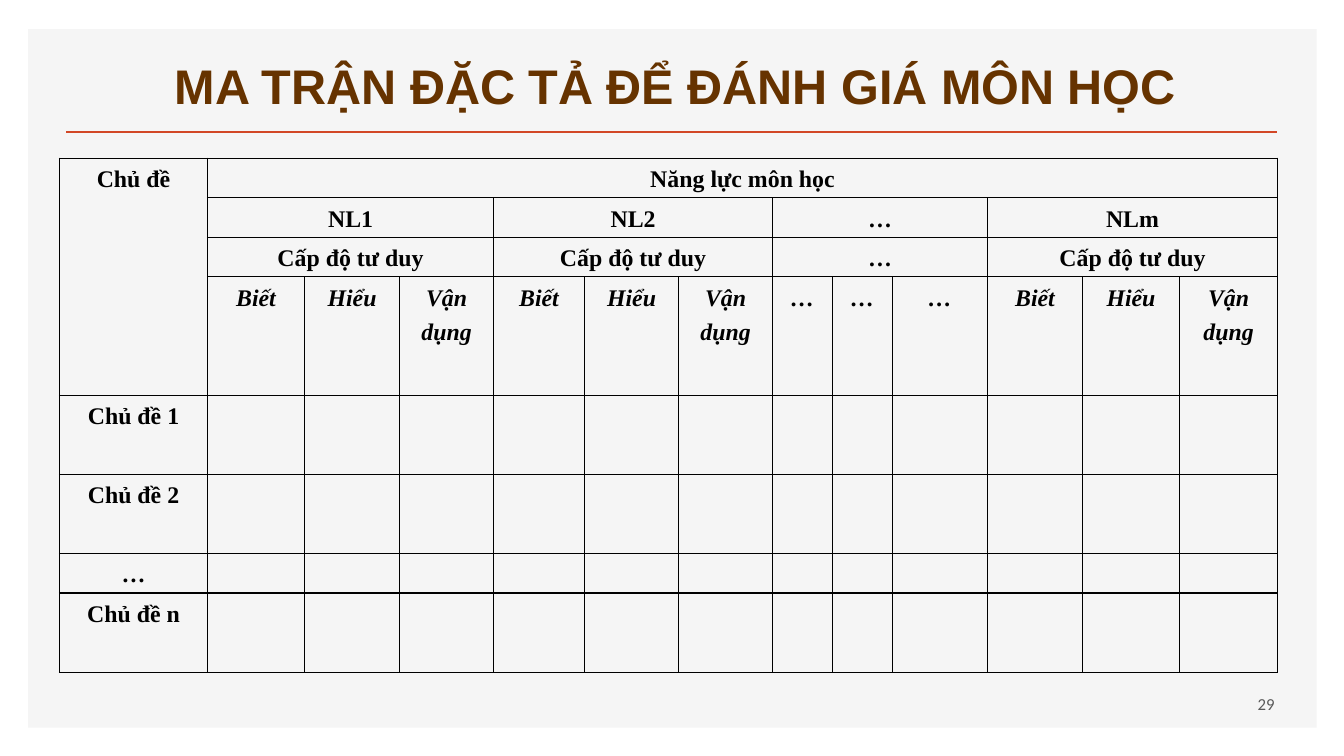
import typing

import lxml.etree
import pptx
import pptx.dml.color
import pptx.enum.shapes
import pptx.enum.text
import pptx.oxml
import pptx.oxml.ns
import pptx.util

ALIGN = pptx.enum.text.PP_ALIGN
ANCHOR = pptx.enum.text.MSO_ANCHOR
INCH = pptx.util.Inches
PT = pptx.util.Pt
QN = pptx.oxml.ns.qn

WIDE, HIGH = INCH(13.33), INCH(7.5)
HUES = {"panel": "F5F5F5", "rule": "D24726", "title": "663300",
        "page": "595959", "ink": "000000"}


class Box(typing.NamedTuple):
    """Place and size in percent of the slide's width and height."""
    left: float
    top: float
    wide: float
    high: float

    def emu(self) -> list[int]:
        sides = (WIDE, HIGH, WIDE, HIGH)
        return [round(side * part / 100) for side, part in zip(sides, self)]


class Style(typing.NamedTuple):
    hue: str
    font: dict
    para: dict
    frame: dict


class Label(typing.NamedTuple):
    text: str
    box: Box
    style: Style


class Head(typing.NamedTuple):
    """A table label with its cell and the rows and columns it covers."""
    text: str
    row: int
    col: int
    rows: int = 1
    cols: int = 1
    slant: bool = False


TITLE = Style("title", {"name": "Arial", "size": PT(34.7), "bold": True},
              {"alignment": ALIGN.CENTER, "line_spacing": 0.9},
              {"word_wrap": True, "vertical_anchor": ANCHOR.BOTTOM})
PAGE = Style("page", {"name": "Calibri", "size": PT(12)},
             {"alignment": ALIGN.RIGHT},
             {"word_wrap": True, "vertical_anchor": ANCHOR.MIDDLE})
CELL = Style("ink", {"name": "Times New Roman", "size": PT(17), "bold": True},
             {"alignment": ALIGN.CENTER, "line_spacing": 1.3, "space_after": PT(8)},
             {})
INSET = {"margin_left": INCH(0.1), "margin_right": INCH(0.1),
         "margin_top": 0, "margin_bottom": 0}
PLAIN = {"first_row": False, "horz_banding": False}

PANEL = Box(2.1, 3.87, 95.87, 92.4)
RULE = Box(4.95, 17.47, 90.1, 0)
GRID = Box(4.43, 20.93, 90.65, 68)
LABELS = [
    Label("MA TRẬN ĐẶC TẢ ĐỂ ĐÁNH GIÁ MÔN HỌC", Box(2.7, 6.53, 95.12, 9.33), TITLE),
    Label("29", Box(68.72, 90.4, 26.86, 5.33), PAGE),
]

# Relative widths and heights within the table
COLS = [148, 97, 95, 94, 91, 94, 94, 60, 60, 95, 95, 97, 98]
ROWS = [1, 1, 1, 3, 2, 2, 1, 2]

LEVELS = ["Biết", "Hiểu", "Vận dụng"]
SKILLS = {"NL1": ("Cấp độ tư duy", LEVELS), "NL2": ("Cấp độ tư duy", LEVELS),
          "…": ("…", ["…"] * 3), "NLm": ("Cấp độ tư duy", LEVELS)}
TOPICS = ["Chủ đề 1", "Chủ đề 2", "…", "Chủ đề n"]


def paint(item: typing.Any, form: dict) -> None:
    for name, value in form.items():
        setattr(item, name, value)


def color(hue: str) -> pptx.dml.color.RGBColor:
    return pptx.dml.color.RGBColor.from_string(HUES[hue])


def write(frame: typing.Any, text: str, style: Style, **extra: bool) -> None:
    paint(frame, style.frame)
    para = frame.paragraphs[0]
    paint(para, style.para)
    run = para.add_run()
    run.text = text
    paint(run.font, style.font | extra)
    run.font.color.rgb = color(style.hue)


def edge(cell: typing.Any) -> None:
    """Draw a thin line on all four sides of a cell."""
    props = cell._tc.get_or_add_tcPr()
    for spot, side in enumerate(("a:lnL", "a:lnR", "a:lnT", "a:lnB")):
        line = lxml.etree.Element(QN(side), w=str(PT(1)))
        fill = lxml.etree.SubElement(line, QN("a:solidFill"))
        lxml.etree.SubElement(fill, QN("a:srgbClr"), val=HUES["ink"])
        props.insert(spot, line)


def heads() -> typing.Iterator[Head]:
    yield Head("Chủ đề", 0, 0, rows=4)
    yield Head("Năng lực môn học", 0, 1, cols=len(COLS) - 1)
    for group, (skill, (scale, levels)) in enumerate(SKILLS.items()):
        col = 1 + 3 * group
        yield Head(skill, 1, col, cols=3)
        yield Head(scale, 2, col, cols=3)
        for step, level in enumerate(levels):
            yield Head(level, 3, col + step, slant=True)
    for row, topic in enumerate(TOPICS, 4):
        yield Head(topic, row, 0)


def matrix(shapes: typing.Any) -> None:
    left, top, wide, high = GRID.emu()
    table = shapes.add_table(len(ROWS), len(COLS), left, top, wide, high).table
    paint(table, PLAIN)
    for col, part in zip(table.columns, COLS):
        col.width = round(wide * part / sum(COLS))
    for row, part in zip(table.rows, ROWS):
        row.height = round(high * part / sum(ROWS))
    for cell in table.iter_cells():
        paint(cell, INSET)
        cell.fill.background()
        edge(cell)
    for head in heads():
        cell = table.cell(head.row, head.col)
        if head.rows * head.cols > 1:
            last = (head.row + head.rows - 1, head.col + head.cols - 1)
            cell.merge(table.cell(*last))
        write(cell.text_frame, head.text, CELL, italic=head.slant)


def frame(shapes: typing.Any) -> None:
    """Draw the grey panel and the rule below the title."""
    panel = shapes.add_shape(pptx.enum.shapes.MSO_SHAPE.RECTANGLE, *PANEL.emu())
    panel.shadow.inherit = False
    panel.fill.solid()
    panel.fill.fore_color.rgb = color("panel")
    panel.line.fill.background()
    left, top, wide, high = RULE.emu()
    rule = shapes.add_connector(pptx.enum.shapes.MSO_CONNECTOR.STRAIGHT,
                                left, top, left + wide, top + high)
    rule.line.color.rgb = color("rule")
    rule.line.width = PT(2)
    lxml.etree.SubElement(rule._element.spPr, QN("a:effectLst"))


def main() -> None:
    deck = pptx.Presentation()
    paint(deck, {"slide_width": WIDE, "slide_height": HIGH})
    shapes = deck.slides.add_slide(deck.slide_layouts[6]).shapes
    frame(shapes)
    for label in LABELS:
        box = shapes.add_textbox(*label.box.emu())
        write(box.text_frame, label.text, label.style)
    matrix(shapes)
    deck.save("out.pptx")


if __name__ == "__main__":
    main()
